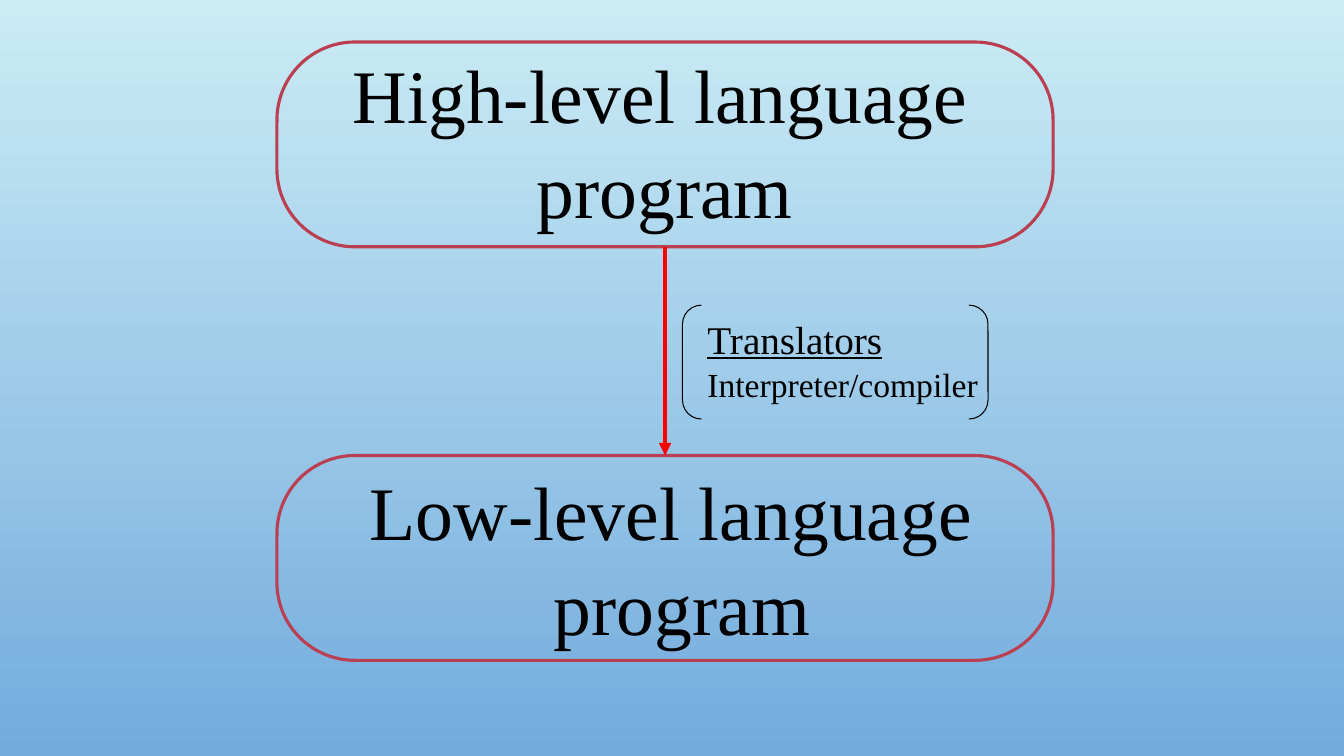
from lxml.etree import SubElement
from pptx import Presentation
from pptx.dml.color import RGBColor
from pptx.enum.shapes import MSO_CONNECTOR, MSO_SHAPE
from pptx.enum.text import MSO_ANCHOR, MSO_AUTO_SIZE, PP_ALIGN
from pptx.oxml.ns import qn
from pptx.util import Cm, Pt


def color(value):
    return RGBColor.from_string(value)


def write(paragraph, text, size=54, font="Times New Roman", ink="000000",
          align=PP_ALIGN.LEFT, underline=False, spacing=1.05):
    paragraph.alignment = align
    paragraph.line_spacing = spacing
    run = paragraph.add_run()
    run.text = text
    run.font.name = font
    run.font.size = Pt(size)
    run.font.color.rgb = color(ink)
    run.font.underline = underline


class FlowSlide:
    border = "BA3F51"
    arrow_red = "FF0000"
    ink = "000000"

    def __init__(self, slide):
        self.slide = slide

    def background(self, top, bottom):
        fill = self.slide.background.fill
        fill.gradient()
        fill.gradient_angle = 270
        for stop, value, position in zip(fill.gradient_stops, (top, bottom), (0, 1)):
            stop.color.rgb = color(value)
            stop.position = position

    def outline(self, preset, left, top, width, height, line, weight, rounding=None):
        frame = self.slide.shapes.add_shape(preset, Cm(left), Cm(top), Cm(width), Cm(height))
        frame.shadow.inherit = False
        frame.fill.background()
        frame.line.color.rgb = color(line)
        frame.line.width = Pt(weight)
        if rounding is not None:
            frame.adjustments[0] = rounding

    def program_frame(self, top):
        self.outline(MSO_SHAPE.ROUNDED_RECTANGLE, 6.98, top, 19.56, 5.16,
                     self.border, 2.25, 0.38)

    def label(self, left, top, width, height, lines, anchor=MSO_ANCHOR.TOP):
        box = self.slide.shapes.add_textbox(Cm(left), Cm(top), Cm(width), Cm(height))
        frame = box.text_frame
        frame.word_wrap = True
        frame.auto_size = MSO_AUTO_SIZE.SHAPE_TO_FIT_TEXT
        frame.vertical_anchor = anchor
        for index, (text, style) in enumerate(lines):
            paragraph = frame.add_paragraph() if index else frame.paragraphs[0]
            write(paragraph, text, **style)

    def arrow_down(self, x, start, end):
        arrow = self.slide.shapes.add_connector(
            MSO_CONNECTOR.STRAIGHT, Cm(x), Cm(start), Cm(x), Cm(end))
        arrow.line.color.rgb = color(self.arrow_red)
        arrow.line.width = Pt(3)
        SubElement(arrow.line._get_or_add_ln(), qn("a:tailEnd"), type="triangle")
        SubElement(arrow._element.spPr, qn("a:effectLst"))


def main():
    presentation = Presentation()
    presentation.slide_width = Cm(33.87)
    presentation.slide_height = Cm(19.05)
    flow = FlowSlide(presentation.slides.add_slide(presentation.slide_layouts[6]))
    flow.background("CBECF5", "73ABDD")

    levels = [
        ("High-level language", 8.64, 1.06, MSO_ANCHOR.MIDDLE),
        ("Low-level language", 9.07, 11.48, MSO_ANCHOR.TOP),
    ]
    for level, left, top, anchor in levels:
        flow.program_frame(top)
        flow.label(left, top, 16.23, 4.88,
                   [(level, {}), ("program", {"align": PP_ALIGN.CENTER})], anchor)

    flow.arrow_down(16.76, 6.22, 11.48)
    flow.outline(MSO_SHAPE.DOUBLE_BRACKET, 17.2, 7.69, 7.7, 2.87, flow.ink, 0.75)
    flow.label(17.58, 7.75, 8.99, 2.49, [
        ("Translators", {"size": 28, "underline": True}),
        ("Interpreter/compiler", {"size": 24}),
    ])

    presentation.save("out.pptx")


if __name__ == "__main__":
    main()
